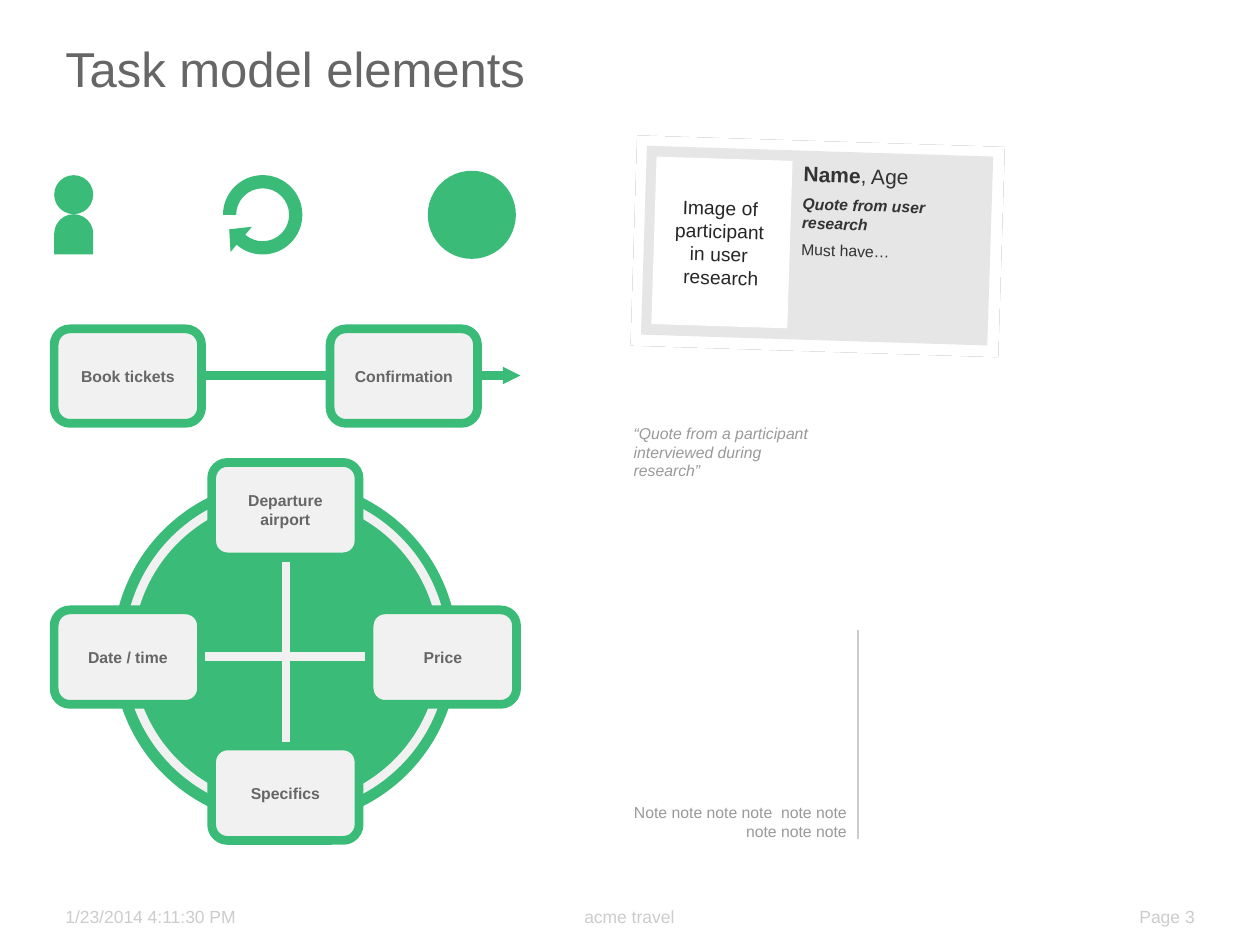
import itertools
import math
from dataclasses import dataclass, field

import pptx
import pptx.dml.color
import pptx.enum.shapes
import pptx.enum.text
import pptx.oxml
import pptx.oxml.ns
import pptx.shapes.autoshape
import pptx.shapes.connector
import pptx.shapes.group
import pptx.slide
import pptx.util

Inches = pptx.util.Inches
qn = pptx.oxml.ns.qn
Slide = pptx.slide.Slide
Canvas = Slide | pptx.shapes.group.GroupShape
Shape = pptx.shapes.autoshape.Shape
Connector = pptx.shapes.connector.Connector
ShapeKind = pptx.enum.shapes.MSO_SHAPE
Align = pptx.enum.text.PP_ALIGN
Anchor = pptx.enum.text.MSO_ANCHOR

COLORS = {
    "green": "3ABC78", "panel": "F1F1F1", "white": "FFFFFF", "card": "E6E6E6",
    "title": "666666", "footer": "CCCCCC", "note": "999999", "ink": "333333",
    "dark": "262626", "shadow": "808080",
}
DEFAULT_INSETS = (0.1, 0.05)
STROKE = 5
TILT = 1.8


@dataclass
class Run:
    text: str
    size: float
    color: str
    style: dict = field(default_factory=dict)


@dataclass
class Box:
    left: float
    top: float
    width: float
    height: float
    kind: ShapeKind = ShapeKind.RECTANGLE
    fill: str = ""
    line: str = ""
    rotation: float = 0


@dataclass
class Rule:
    start: tuple
    end: tuple
    color: str
    weight: float = STROKE


def rgb(name: str) -> pptx.dml.color.RGBColor:
    """Return the named colour."""
    return pptx.dml.color.RGBColor.from_string(COLORS[name])


def paint(shape: Shape, fill: str, line: str = "") -> None:
    """Set fill and line and remove the shadow."""
    shape.shadow.inherit = False
    if fill:
        shape.fill.solid()
        shape.fill.fore_color.rgb = rgb(fill)
    else:
        shape.fill.background()
    if line:
        shape.line.color.rgb = rgb(line)
        shape.line.width = pptx.util.Pt(STROKE)
    else:
        shape.line.fill.background()


def draw_box(canvas: Canvas, box: Box) -> Shape:
    """Draw a preset shape."""
    lengths = map(Inches, (box.left, box.top, box.width, box.height))
    shape = canvas.shapes.add_shape(box.kind, *lengths)
    shape.rotation = box.rotation
    if box.kind == ShapeKind.ROUNDED_RECTANGLE:
        shape.adjustments[0] = 0.167
    paint(shape, box.fill, box.line)
    return shape


def write(shape: Shape, paragraphs: list[list[Run]], align: Align = Align.LEFT,
          anchor: Anchor = Anchor.MIDDLE, insets: tuple = DEFAULT_INSETS,
          wrap: bool = True, gap: float = 0) -> None:
    """Fill a shape with formatted paragraphs."""
    side, edge = map(Inches, insets)
    frame = shape.text_frame
    frame_format = {
        "word_wrap": wrap, "vertical_anchor": anchor, "margin_left": side,
        "margin_right": side, "margin_top": edge, "margin_bottom": edge,
    }
    for name, value in frame_format.items():
        setattr(frame, name, value)
    for index, runs in enumerate(paragraphs):
        paragraph = frame.add_paragraph() if index else frame.paragraphs[0]
        paragraph.alignment = align
        paragraph.space_before = pptx.util.Pt(gap if index else 0)
        for item in runs:
            run = paragraph.add_run()
            run.text = item.text
            run.font.color.rgb = rgb(item.color)
            font_format = {"name": "Arial", "size": pptx.util.Pt(item.size), **item.style}
            for name, value in font_format.items():
                setattr(run.font, name, value)


def draw_text(canvas: Canvas, box: Box, paragraphs: list[list[Run]], **options) -> None:
    """Draw a text box."""
    lengths = map(Inches, (box.left, box.top, box.width, box.height))
    shape = canvas.shapes.add_textbox(*lengths)
    shape.rotation = box.rotation
    write(shape, paragraphs, **options)


def draw_rule(canvas: Canvas, rule: Rule) -> Connector:
    """Draw a straight line."""
    connector = canvas.shapes.add_connector(
        pptx.enum.shapes.MSO_CONNECTOR.STRAIGHT, *map(Inches, rule.start + rule.end))
    connector.line.color.rgb = rgb(rule.color)
    connector.line.width = pptx.util.Pt(rule.weight)
    properties = connector._element.spPr
    properties.append(properties.makeelement(qn("a:effectLst"), {}))
    return connector


def draw_task(slide: Slide, label: str, left: float, top: float, wrap: bool = True) -> None:
    """Draw a rounded task card."""
    shape = draw_box(slide, Box(left, top, 1.17, 0.75, ShapeKind.ROUNDED_RECTANGLE,
                                "panel", "green"))
    write(shape, [[Run(label, 9, "title", {"bold": True})]], Align.CENTER, wrap=wrap)


def arc(radius: float, *stops: int) -> list[tuple]:
    """Return an arc's start, then two handles and an end for each piece."""
    def place(angle: float, handle: float = 0) -> tuple:
        x, y = math.cos(angle), math.sin(angle)
        return (2.085 + radius * (x - handle * y), 1.705 + radius * (y + handle * x))

    angles = [math.radians(stop) for stop in stops]
    points = [place(angles[0])]
    for first, last in itertools.pairwise(angles):
        handle = 4 / 3 * math.tan((last - first) / 4)
        points += [place(first, handle), place(last, -handle), place(last)]
    return points


def draw_loop(slide: Slide) -> None:
    """Draw the circular arrow with curved edges."""
    inner = arc(0.21, 131, 90, 0, -90, -180)
    outer = arc(0.315, -180, -90, 0, 90, 131)
    outline = inner + outer + [(1.83, 2), (1.82, 1.82), (2, 1.8)]
    points = [(Inches(x), Inches(y)) for x, y in outline]
    builder = slide.shapes.build_freeform(*points[0])
    builder.add_line_segments(points[1:], close=True)
    loop = builder.convert_to_shape()
    paint(loop, "green")
    steps = list(loop._element.iter(qn("a:lnTo")))
    for start in (*range(0, len(inner) - 1, 3), *range(len(inner), len(inner + outer) - 1, 3)):
        curve = steps[start].makeelement(qn("a:cubicBezTo"), {})
        steps[start].addprevious(curve)
        for step in steps[start:start + 3]:
            curve.append(step[0])
            step.getparent().remove(step)


def draw_icons(slide: Slide) -> None:
    """Draw the person, loop and dot icons."""
    person = slide.shapes.add_group_shape()
    draw_box(person, Box(0.43, 1.86, 0.31, 0.16, fill="green"))
    for top in (1.39, 1.7):
        draw_box(person, Box(0.43, top, 0.31, 0.31, ShapeKind.OVAL, "green"))
    draw_loop(slide)
    draw_box(slide, Box(3.43, 1.39, 0.63, 0.63, ShapeKind.OVAL, "green", "green"))


def draw_flow(slide: Slide) -> None:
    """Draw the two-step task flow."""
    draw_task(slide, "Confirmation", 2.62, 2.61, wrap=False)
    draw_rule(slide, Rule((1.6, 2.98), (2.62, 2.98), "green"))
    draw_task(slide, "Book tickets", 0.43, 2.61)
    arrow = draw_rule(slide, Rule((3.79, 2.98), (4.13, 2.98), "green"))
    line = arrow.line._get_or_add_ln()
    head = {"type": "triangle", "w": "sm", "len": "sm"}
    line.append(line.makeelement(qn("a:tailEnd"), head))


def draw_wheel(slide: Slide) -> None:
    """Draw the wheel of four related tasks."""
    draw_box(slide, Box(0.93, 3.84, 2.67, 2.67, ShapeKind.OVAL, "green", "green"))
    draw_box(slide, Box(1.02, 3.92, 2.5, 2.5, ShapeKind.OVAL, line="panel"))
    for label, left, top in (("Date / time", 0.43, 4.84), ("Price", 2.93, 4.84),
                             ("Departure airport", 1.68, 3.67), ("Specifics", 1.68, 5.92)):
        draw_task(slide, label, left, top)
    draw_rule(slide, Rule((1.63, 5.21), (2.9, 5.21), "panel"))
    draw_rule(slide, Rule((2.27, 4.46), (2.27, 5.89), "panel"))


def draw_notes(slide: Slide) -> None:
    """Draw the margin note and the participant quote."""
    margin = slide.shapes.add_group_shape()
    draw_rule(margin, Rule((6.81, 5), (6.81, 6.66), "footer", 0.75))
    note = Run("Note note note note  note note note note note", 9, "note")
    draw_text(margin, Box(4.89, 5.75, 1.83, 0.92), [[note]], align=Align.RIGHT,
              anchor=Anchor.BOTTOM, insets=(0, 0))
    quote = Run("“Quote from a participant interviewed during research”", 9, "note",
                {"italic": True})
    draw_text(slide, Box(5.03, 3.36, 1.5, 0.83), [[quote]], anchor=Anchor.TOP, insets=(0, 0))


def draw_persona(slide: Slide) -> None:
    """Draw the tilted persona card."""
    persona = slide.shapes.add_group_shape()
    frame = draw_box(persona, Box(5.03, 1.12, 2.92, 1.67, fill="white", rotation=TILT))
    effects = frame._element.spPr.find(qn("a:effectLst"))
    effects.append(pptx.oxml.parse_xml(
        f'<a:outerShdw {pptx.oxml.ns.nsdecls("a")} blurRad="0" dist="0" dir="0">'
        f'<a:srgbClr val="{COLORS["shadow"]}"/></a:outerShdw>'))
    draw_box(persona, Box(5.11, 1.2, 2.75, 1.5, fill="card", rotation=TILT))
    portrait = draw_box(persona, Box(5.19, 1.26, 1.08, 1.33, fill="white", rotation=TILT))
    caption = ("Image of ", "participant ", "in user ", "research")
    write(portrait, [[Run(text, 11, "dark")] for text in caption], Align.CENTER, wrap=False)
    details = [
        [Run("Name", 12, "ink", {"bold": True}), Run(", Age", 12, "ink")],
        [Run("Quote from user research", 9, "ink", {"bold": True, "italic": True})],
        [Run("Must have…", 9, "ink")],
    ]
    draw_text(persona, Box(6.36, 1.3, 1.42, 1.33, rotation=TILT), details,
              anchor=Anchor.TOP, insets=(0, 0), gap=4.5)


def main() -> None:
    """Build and save the slide."""
    presentation = pptx.Presentation()
    presentation.slide_width, presentation.slide_height = Inches(10), Inches(7.5)
    slide = presentation.slides.add_slide(presentation.slide_layouts[6])
    draw_text(slide, Box(0.42, 0.25, 9.17, 0.58), [[Run("Task model elements", 28, "title")]])
    for text, left, width, align in (("1/23/2014 4:11:30 PM", 0.42, 2.08, Align.LEFT),
                                     ("acme travel", 2.83, 4.33, Align.CENTER),
                                     ("Page 3", 7.5, 2.08, Align.RIGHT)):
        draw_text(slide, Box(left, 7.16, width, 0.25), [[Run(text, 10, "footer")]],
                  align=align, anchor=Anchor.BOTTOM)
    for draw in (draw_icons, draw_flow, draw_wheel, draw_notes, draw_persona):
        draw(slide)
    presentation.save("out.pptx")


if __name__ == "__main__":
    main()
